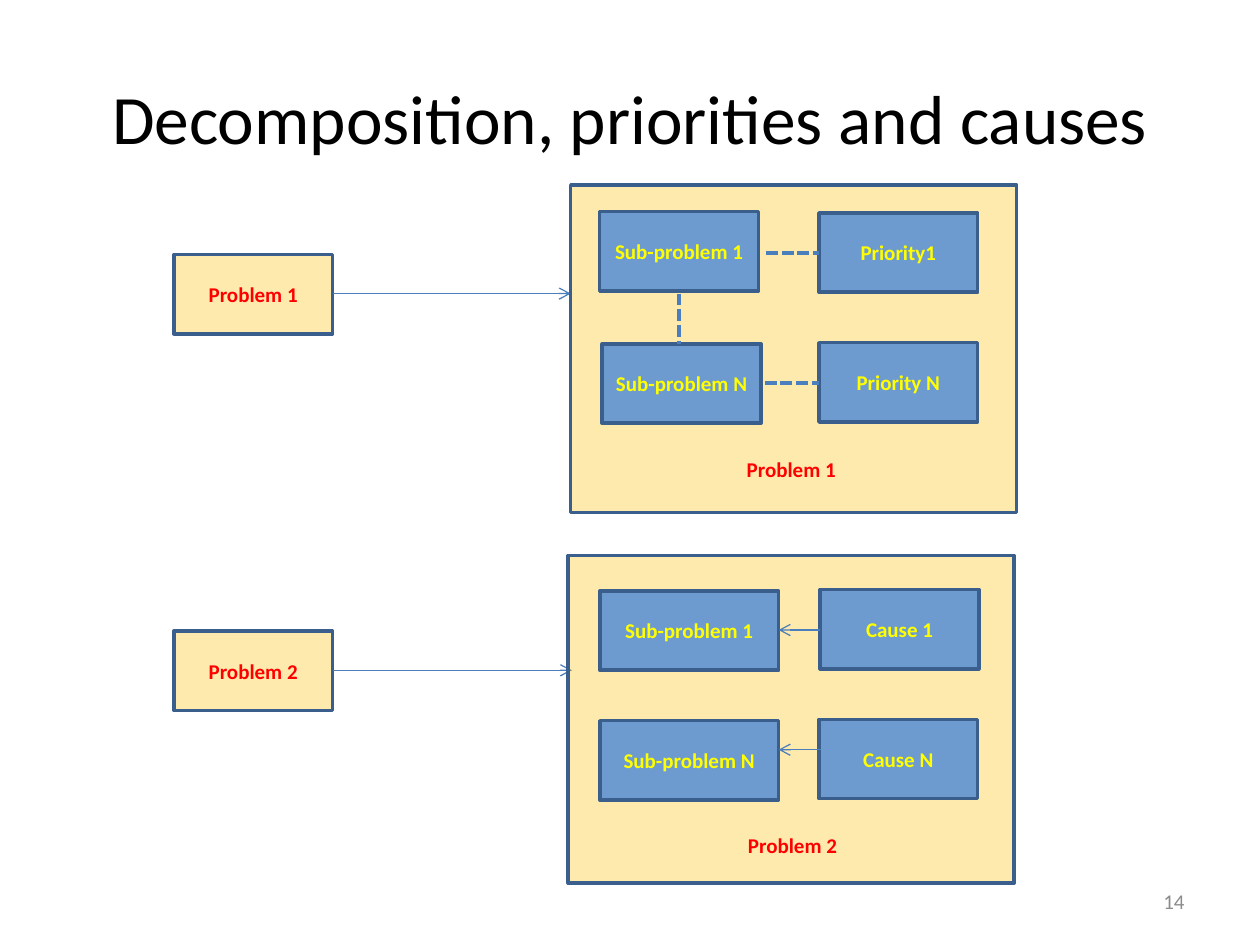
import pptx
import pptx.util
import pptx.dml.color
import pptx.enum.dml
import pptx.enum.shapes
import pptx.enum.text
import pptx.oxml
import pptx.oxml.ns

PX = 9144  # EMU, 100 px to the inch
FONT = "Calibri"
BLOCK_WIDTH, BLOCK_HEIGHT = 126, 63
COLOURS = {
    "black": "000000",
    "amber": "FFC000",
    "blue": "558ED5",
    "outline": "3A5F8C",
    "connector": "4B7EBC",
    "red": "FF0000",
    "yellow": "FFFF00",
    "grey": "8C8C8C",
}
ALIGN = pptx.enum.text.PP_ALIGN
MIDDLE = pptx.enum.text.MSO_ANCHOR.MIDDLE


def colour(name):
    return pptx.dml.color.RGBColor.from_string(COLOURS[name])


def emu(*lengths):
    return [pptx.util.Emu(length * PX) for length in lengths]


def write(frame, text, colour_name, size=12, bold=True, align=ALIGN.CENTER):
    frame.vertical_anchor = MIDDLE
    paragraph = frame.paragraphs[0]
    paragraph.alignment = align
    run = paragraph.add_run()
    run.text = text
    run.font.name = FONT
    run.font.size = pptx.util.Pt(size)
    run.font.bold = bold
    run.font.color.rgb = colour(colour_name)


def add_block(slide, box, fill, opacity, text=None, text_colour=None):
    shape = slide.shapes.add_shape(
        pptx.enum.shapes.MSO_SHAPE.RECTANGLE, *emu(*box))
    shape.shadow.inherit = False
    shape.fill.solid()
    shape.fill.fore_color.rgb = colour(fill)
    solid = shape.fill._xPr.find(pptx.oxml.ns.qn("a:solidFill"))
    alpha = pptx.oxml.parse_xml(
        f'<a:alpha {pptx.oxml.ns.nsdecls("a")} val="{opacity * 1000}"/>')
    solid[0].append(alpha)
    shape.line.color.rgb = colour("outline")
    shape.line.width = pptx.util.Pt(2)
    if text:
        frame = shape.text_frame
        frame.word_wrap = True
        frame.margin_left = frame.margin_right = emu(5)[0]
        write(frame, text, text_colour)


def add_link(slide, start, end, dashed=False):
    """Draw a thick dashed line, or else a thin arrow."""
    connector = slide.shapes.add_connector(
        pptx.enum.shapes.MSO_CONNECTOR.STRAIGHT, *emu(*start, *end))
    line = connector.line
    line.color.rgb = colour("connector")
    line.width = pptx.util.Pt(2.25 if dashed else 0.75)
    if dashed:
        line.dash_style = pptx.enum.dml.MSO_LINE.SQUARE_DOT
    else:
        line._get_or_add_ln().append(pptx.oxml.parse_xml(
            f'<a:tailEnd {pptx.oxml.ns.nsdecls("a")} type="arrow"/>'))
    connector._element.spPr.append(pptx.oxml.parse_xml(
        f'<a:effectLst {pptx.oxml.ns.nsdecls("a")}/>'))


def add_text(slide, box, text, colour_name, **style):
    frame = slide.shapes.add_textbox(*emu(*box)).text_frame
    frame.word_wrap = True
    write(frame, text, colour_name, **style)


def add_title(slide, box, text):
    title = slide.shapes.title
    title.left, title.top, title.width, title.height = emu(*box)
    write(title.text_frame, text, "black", size=39.6, bold=False)


def add_problem(slide, left, top, text, arrow_length):
    add_block(slide, (left, top, BLOCK_WIDTH, BLOCK_HEIGHT),
              "amber", 32, text, "red")
    right, middle = left + BLOCK_WIDTH, top + 31
    add_link(slide, (right, middle), (right + arrow_length, middle))


def add_panel(slide, box, caption, caption_at, blocks, links):
    """Blocks are (x, y, width, text) and links (start, end, dashed)."""
    left, top = box[:2]
    add_block(slide, box, "amber", 32)
    for x, y, width, text in blocks:
        add_block(slide, (left + x, top + y, width, BLOCK_HEIGHT),
                  "blue", 85, text, "yellow")
    for (x1, y1), (x2, y2), dashed in links:
        add_link(slide, (left + x1, top + y1), (left + x2, top + y2), dashed)
    x, y = caption_at
    add_text(slide, (left + x, top + y, 92, 30), caption, "red")


def main():
    presentation = pptx.Presentation()
    presentation.slide_width, presentation.slide_height = emu(1000, 750)
    slide = presentation.slides.add_slide(presentation.slide_layouts[5])
    add_title(slide, (50, 30, 900, 125), "Decomposition, priorities and causes")

    add_problem(slide, 138, 202, "Problem 1", 189)
    add_panel(
        slide, (453, 147, 354, 260), "Problem 1", (129, 210),
        blocks=[(23, 21, BLOCK_WIDTH, "Sub-problem 1"),
                (25, 126, BLOCK_WIDTH, "Sub-problem N"),
                (197, 22, BLOCK_WIDTH, "Priority1"),
                (197, 125, BLOCK_WIDTH, "Priority N")],
        links=[((86, 86), (86, 126), True),
               ((155, 54), (197, 54), True),
               ((154, 157), (197, 157), True)])

    add_problem(slide, 138, 501, "Problem 2", 190)
    add_panel(
        slide, (451, 441, 354, 260), "Problem 2", (132, 215),
        blocks=[(25, 28, 142, "Sub-problem 1"),
                (25, 131, 142, "Sub-problem N"),
                (200, 27, BLOCK_WIDTH, "Cause 1"),
                (199, 130, BLOCK_WIDTH, "Cause N")],
        links=[((200, 59), (167, 59), False),
               ((201, 154), (167, 154), False)])

    add_text(slide, (717, 695, 233, 40), "14", "grey",
             bold=False, align=ALIGN.RIGHT)
    presentation.save("out.pptx")


if __name__ == "__main__":
    main()
